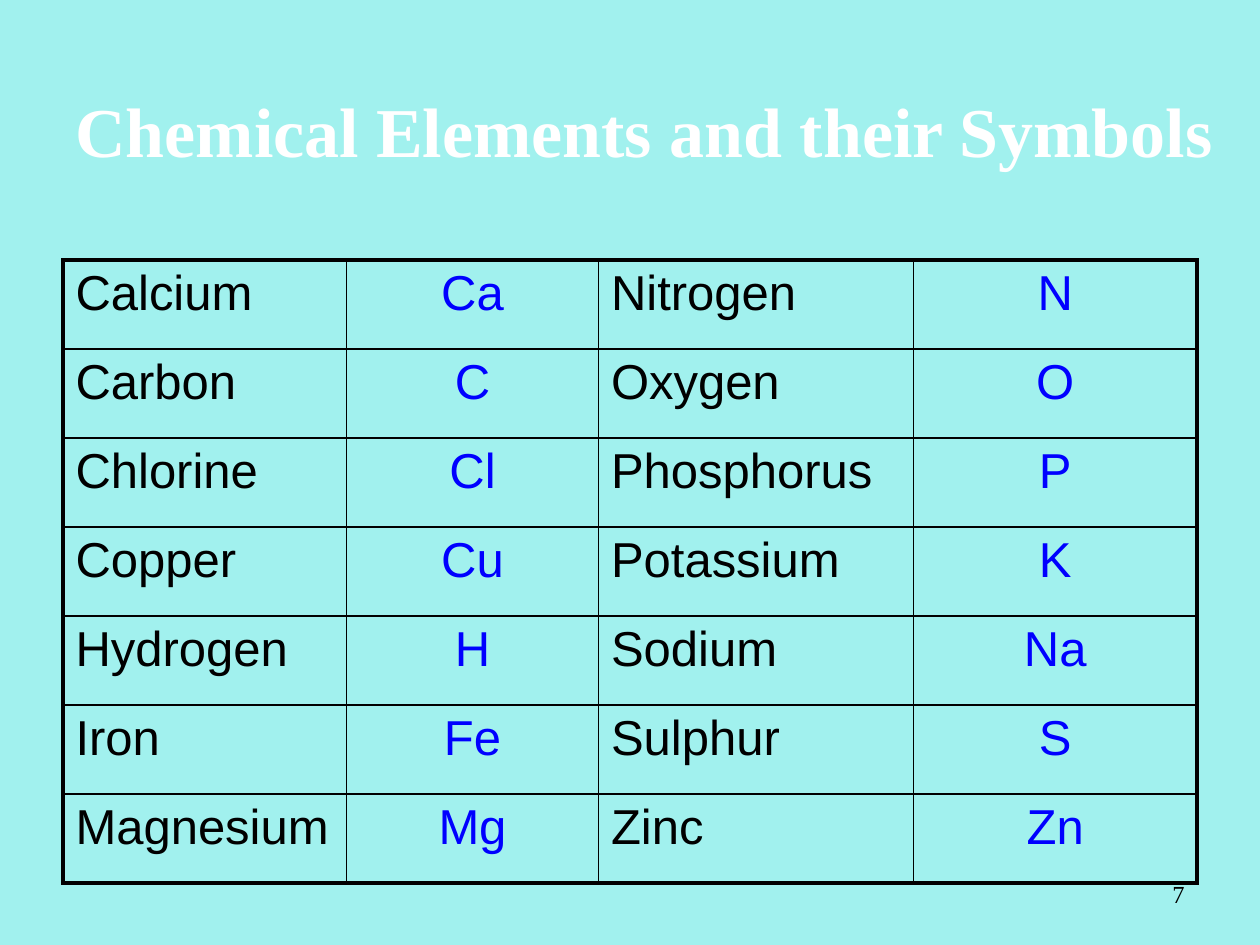
from lxml import etree
from pptx import Presentation
from pptx.dml.color import RGBColor
from pptx.enum import text
from pptx.oxml import ns
from pptx.util import Pt

BLACK, BLUE, WHITE, AQUA = "000000", "0000FF", "FFFFFF", "A1F1EE"
THIN, THICK = 1, 2.25
COLUMNS = [162, 144, 180, 162]
ELEMENTS = [
    ("Calcium", "Ca", "Nitrogen", "N"),
    ("Carbon", "C", "Oxygen", "O"),
    ("Chlorine", "Cl", "Phosphorus", "P"),
    ("Copper", "Cu", "Potassium", "K"),
    ("Hydrogen", "H", "Sodium", "Na"),
    ("Iron", "Fe", "Sulphur", "S"),
    ("Magnesium", "Mg", "Zinc", "Zn"),
]


def rgb(value):
    """Return the colour for a hex string."""
    return RGBColor.from_string(value)


def write(tf, words, size, font, color, align, bold=False):
    """Fill a text frame with one formatted paragraph."""
    tf.text = words
    p = tf.paragraphs[0]
    p.alignment = align
    f = p.runs[0].font
    f.size, f.name, f.bold = Pt(size), font, bold
    f.color.rgb = rgb(color)


def add_label(s, box, words, size, color, align, bold=False):
    """Add a vertically centred text box in the given box."""
    tf = s.shapes.add_textbox(*map(Pt, box)).text_frame
    tf.word_wrap = True
    tf.vertical_anchor = text.MSO_ANCHOR.MIDDLE
    write(tf, words, size, "Times New Roman", color, align, bold)


def set_borders(cell, widths):
    """Draw the left, right, top and bottom borders of a cell."""
    tcPr = cell._tc.get_or_add_tcPr()
    for i, (side, width) in enumerate(zip("LRTB", widths)):
        ln = etree.Element(ns.qn(f"a:ln{side}"), w=str(Pt(width)))
        fill = etree.SubElement(ln, ns.qn("a:solidFill"))
        etree.SubElement(fill, ns.qn("a:srgbClr"), val=BLACK)
        tcPr.insert(i, ln)


def add_elements_table(s, box):
    """Add the table of element names and symbols in the given box."""
    rows, cols = len(ELEMENTS), len(COLUMNS)
    table = s.shapes.add_table(rows, cols, *map(Pt, box)).table
    table.first_row = table.horz_banding = False
    for column, width in zip(table.columns, COLUMNS):
        column.width = Pt(width)
    for r, entries in enumerate(ELEMENTS):
        table.rows[r].height = Pt(box[3] / rows)
        for c, words in enumerate(entries):
            cell = table.cell(r, c)
            cell.fill.background()
            color, align = ((BLUE, text.PP_ALIGN.CENTER) if c % 2
                            else (BLACK, text.PP_ALIGN.LEFT))
            write(cell.text_frame, words, 28, "Arial", color, align)
            outer = (c == 0, c == cols - 1, r == 0, r == rows - 1)
            set_borders(cell, [THICK if edge else THIN for edge in outer])


def main():
    """Build and save the slide."""
    prs = Presentation()
    prs.slide_width, prs.slide_height = Pt(720), Pt(540)
    s = prs.slides.add_slide(prs.slide_layouts[6])
    s.background.fill.solid()
    s.background.fill.fore_color.rgb = rgb(AQUA)
    add_label(s, (516, 492, 168, 37.5), "7", 14, BLACK, text.PP_ALIGN.RIGHT)
    add_label(s, (36, 21.6, 684, 104.4), "Chemical Elements and their Symbols",
              40, WHITE, text.PP_ALIGN.LEFT, bold=True)
    add_elements_table(s, (36, 148.5, 648, 356.3))
    prs.save("out.pptx")


if __name__ == "__main__":
    main()
